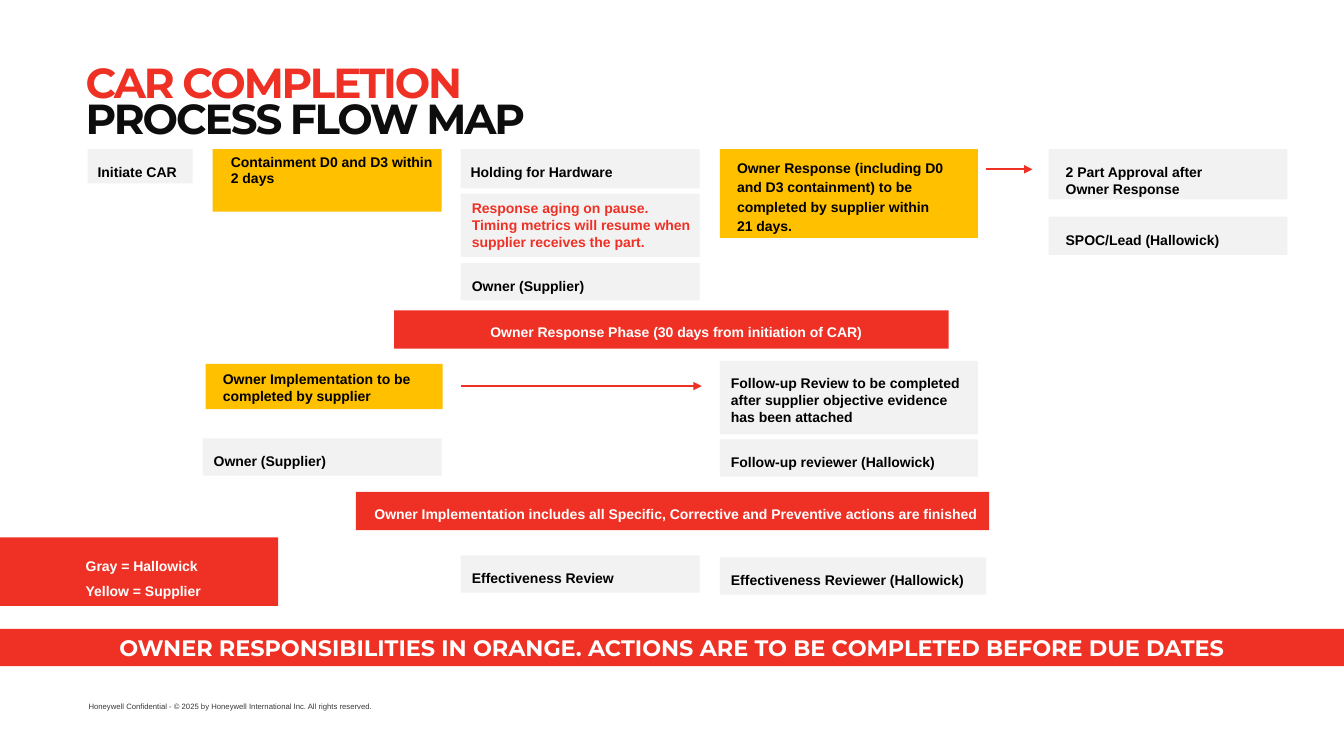
import pptx
import pptx.dml.color
import pptx.enum.shapes
import pptx.enum.text
import pptx.oxml
import pptx.oxml.ns
import pptx.util

Inches, Pt = pptx.util.Inches, pptx.util.Pt
RGBColor = pptx.dml.color.RGBColor
ALIGN = pptx.enum.text.PP_ALIGN
ANCHOR = pptx.enum.text.MSO_ANCHOR

RED = RGBColor(0xEF, 0x31, 0x25)
BANNER_RED = RGBColor(0xEE, 0x31, 0x24)
GRAY = RGBColor(0xF2, 0xF2, 0xF2)
YELLOW = RGBColor(0xFF, 0xC0, 0x00)
BLACK = RGBColor(0, 0, 0)
TITLE_BLACK = RGBColor(0x0D, 0x0D, 0x0D)
FOOTER_GRAY = RGBColor(0x38, 0x38, 0x38)
WHITE = RGBColor(0xFF, 0xFF, 0xFF)

TITLE = [("CAR COMPLETION", RED), ("PROCESS FLOW MAP", TITLE_BLACK)]
BANNER = "OWNER RESPONSIBILITIES IN ORANGE. ACTIONS ARE TO BE COMPLETED BEFORE DUE DATES"
FOOTER = "Honeywell Confidential - © 2025 by Honeywell International Inc. All rights reserved."

# text, (left, top, width, height), fill, line spacing in points, (left, top, right) margins
STEPS = [
    ("Initiate CAR", (0.87, 1.48, 1.04, 0.34), GRAY, 18, (0.1, 0.06, 0.08)),
    ("Containment D0 and D3 within 2 days",
     (2.11, 1.48, 2.27, 0.62), YELLOW, 12, (0.18, 0.04, 0.08)),
    ("Holding for Hardware", (4.57, 1.48, 2.37, 0.39), GRAY, 18, (0.1, 0.06, 0.08)),
    ("Response aging on pause. Timing metrics will resume when supplier receives the part.",
     (4.57, 1.92, 2.37, 0.63), GRAY, 12, (0.11, 0.06, 0.08)),
    ("Owner (Supplier)", (4.57, 2.61, 2.37, 0.37), GRAY, 18, (0.11, 0.06, 0.08)),
    ("Owner Response (including D0 and D3 containment) to be completed by supplier within 21 days.",
     (7.14, 1.48, 2.56, 0.88), YELLOW, 14, (0.17, 0.07, 0.3)),
    ("2 Part Approval after Owner Response",
     (10.4, 1.48, 2.37, 0.5), GRAY, 12, (0.17, 0.14, 0.51)),
    ("SPOC/Lead (Hallowick)", (10.4, 2.15, 2.37, 0.38), GRAY, 18, (0.17, 0.06, 0.08)),
    ("Owner Implementation to be completed by supplier",
     (2.04, 3.61, 2.35, 0.45), YELLOW, 12, (0.17, 0.07, 0.08)),
    ("Follow-up Review to be completed after supplier objective evidence has been attached",
     (7.14, 3.58, 2.56, 0.73), GRAY, 12, (0.11, 0.14, 0.15)),
    ("Owner (Supplier)", (2.01, 4.35, 2.37, 0.37), GRAY, 18, (0.11, 0.06, 0.08)),
    ("Follow-up reviewer (Hallowick)", (7.14, 4.36, 2.56, 0.37), GRAY, 18, (0.11, 0.06, 0.08)),
    ("Effectiveness Review", (4.57, 5.51, 2.37, 0.37), GRAY, 18, (0.11, 0.06, 0.08)),
    ("Effectiveness Reviewer (Hallowick)",
     (7.14, 5.53, 2.64, 0.37), GRAY, 18, (0.11, 0.06, 0.08)),
    ("Gray = Hallowick\nYellow = Supplier",
     (0, 5.33, 2.76, 0.68), RED, 18, (0.85, 0.12, 0.1)),
]
PHASES = [
    ("Owner Response Phase (30 days from initiation of CAR)",
     (3.91, 3.08, 5.5, 0.38), RED, 18, (0.17, 0.05, 0.08)),
    ("Owner Implementation includes all Specific, Corrective and Preventive actions are finished",
     (3.53, 4.88, 6.28, 0.38), RED, 18, (0.12, 0.05, 0.06)),
]
RED_TEXT_START = "Response aging"
ARROWS = [(9.78, 10.24, 1.68), (4.57, 6.96, 3.83)]  # start x, end x, y


def style(font, name, size, color, bold=True):
    font.name, font.size, font.bold = name, Pt(size), bold
    font.color.rgb = color


def add_box(slide, place, fill, text, align):
    box = slide.shapes.add_shape(pptx.enum.shapes.MSO_SHAPE.RECTANGLE, *map(Inches, place))
    box.shadow.inherit = False
    box.fill.solid()
    box.fill.fore_color.rgb = fill
    box.line.fill.background()
    frame = box.text_frame
    frame.word_wrap = True
    frame.text = text
    for paragraph in frame.paragraphs:
        paragraph.alignment = align
    return frame


def add_step(slide, text, place, fill, spacing, margins, align=ALIGN.LEFT):
    frame = add_box(slide, place, fill, text, align)
    frame.vertical_anchor = ANCHOR.TOP
    frame.margin_left, frame.margin_top, frame.margin_right = map(Inches, margins)
    frame.margin_bottom = 0
    color = WHITE if fill == RED else RED if text.startswith(RED_TEXT_START) else BLACK
    for paragraph in frame.paragraphs:
        paragraph.line_spacing = Pt(spacing)
        style(paragraph.font, "Arial", 10, color)


def add_arrow(slide, start, end, y):
    arrow = slide.shapes.add_connector(
        pptx.enum.shapes.MSO_CONNECTOR.STRAIGHT,
        Inches(start), Inches(y), Inches(end), Inches(y))
    arrow.line.color.rgb = RED
    arrow.line.width = Pt(1.5)
    namespace = pptx.oxml.ns.nsdecls("a")
    arrow.line._get_or_add_ln().append(
        pptx.oxml.parse_xml(f'<a:tailEnd {namespace} type="triangle"/>'))
    arrow._element.spPr.append(pptx.oxml.parse_xml(f"<a:effectLst {namespace}/>"))


def add_title(slide):
    title = slide.shapes.title
    title.left, title.top, title.width, title.height = map(Inches, (0.75, 0.65, 12.02, 0.83))
    frame = title.text_frame
    frame.auto_size = pptx.enum.text.MSO_AUTO_SIZE.NONE
    frame.vertical_anchor = ANCHOR.TOP
    frame.text = "\v".join(text for text, _ in TITLE)
    paragraph = frame.paragraphs[0]
    paragraph.alignment = ALIGN.LEFT
    paragraph.line_spacing = 0.7
    for run, (_, color) in zip(paragraph.runs, TITLE):
        style(run.font, "Montserrat", 30, color)
        run._r.get_or_add_rPr().set("spc", "-150")


def add_footer(slide):
    footer = slide.shapes.add_textbox(*map(Inches, (0.78, 6.91, 3.03, 0.19)))
    footer.text_frame.word_wrap = False
    footer.text_frame.text = FOOTER
    style(footer.text_frame.paragraphs[0].font, "Arial", 5.5, FOOTER_GRAY, bold=False)


def main():
    presentation = pptx.Presentation()
    presentation.slide_width = Inches(13.33)
    presentation.slide_height = Inches(7.5)
    slide = presentation.slides.add_slide(presentation.slide_layouts[5])
    add_title(slide)
    banner = add_box(slide, (0, 6.24, 13.33, 0.37), BANNER_RED, BANNER, ALIGN.CENTER)
    banner.vertical_anchor = ANCHOR.MIDDLE
    style(banner.paragraphs[0].font, "Montserrat", 16, WHITE)
    for step in STEPS:
        add_step(slide, *step)
    for phase in PHASES:
        add_step(slide, *phase, align=ALIGN.CENTER)
    for arrow in ARROWS:
        add_arrow(slide, *arrow)
    add_footer(slide)
    presentation.save("out.pptx")


if __name__ == "__main__":
    main()
